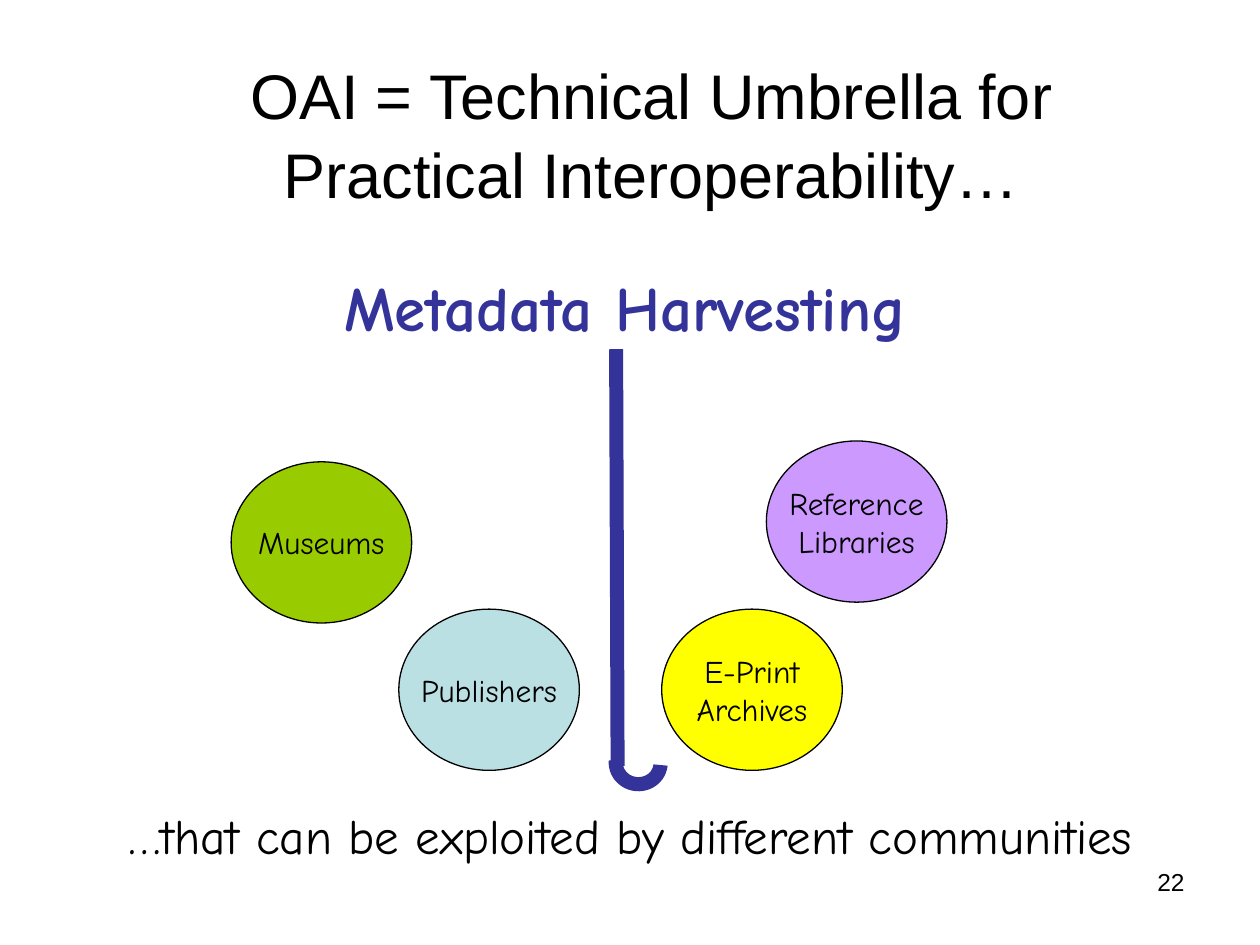
import pptx
import pptx.util
import pptx.dml.color
import pptx.enum.shapes
import pptx.enum.text
import pptx.oxml.ns
import lxml.etree

Cm = pptx.util.Cm
Pt = pptx.util.Pt
SHAPE = pptx.enum.shapes.MSO_SHAPE
ALIGN = pptx.enum.text.PP_ALIGN
ANCHOR = pptx.enum.text.MSO_ANCHOR

COLORS = {
    "text": "000000",
    "umbrella": "333399",
    "museums": "99CC00",
    "publishers": "BBE0E3",
    "eprints": "FFFF00",
    "libraries": "CC99FF",
}


def rgb(name):
    return pptx.dml.color.RGBColor.from_string(COLORS[name])


def write(shape, text, font, size, color="text", bold=False,
          align=ALIGN.CENTER, anchor=ANCHOR.MIDDLE, wrap=True):
    frame = shape.text_frame
    frame.text = text
    frame.word_wrap = wrap
    frame.vertical_anchor = anchor
    for paragraph in frame.paragraphs:
        paragraph.alignment = align
        paragraph.font.name = font
        paragraph.font.size = Pt(size)
        paragraph.font.bold = bold
        paragraph.font.color.rgb = rgb(color)


deck = pptx.Presentation()
deck.slide_width, deck.slide_height = Cm(25.4), Cm(19.05)
slide = deck.slides.add_slide(deck.slide_layouts[5])
shapes = slide.shapes

title = shapes.title
title.left, title.top, title.width, title.height = Cm(1.7), Cm(1.07), Cm(22.86), Cm(3.18)
write(title, "OAI = Technical Umbrella for\vPractical Interoperability…", "Arial", 36)
title.text_frame.paragraphs[0].line_spacing = 1.05

canopy = shapes.add_textbox(Cm(1.27), Cm(5.28), Cm(22.66), Cm(1.7))
write(canopy, "Metadata Harvesting", "Comic Neue", 36, "umbrella", bold=True, anchor=ANCHOR.TOP)

pole = shapes.add_connector(pptx.enum.shapes.MSO_CONNECTOR.STRAIGHT,
                            Cm(12.42), Cm(7.04), Cm(12.45), Cm(15.44))
pole.line.color.rgb = rgb("umbrella")
pole.line.width = Pt(8)
lxml.etree.SubElement(pole._element.spPr, pptx.oxml.ns.qn("a:effectLst"))

handle = shapes.add_shape(SHAPE.BLOCK_ARC, Cm(12.27), Cm(14.81), Cm(1.19), Cm(1.14))
handle.rotation = 185.2
handle.shadow.inherit = False
handle.fill.solid()
handle.fill.fore_color.rgb = rgb("umbrella")
handle.line.fill.background()

communities = [
    ("Reference\nLibraries", "libraries", 15.45, 8.89),
    ("Publishers", "publishers", 8.04, 12.28),
    ("E-Print\vArchives", "eprints", 13.34, 12.28),
    ("Museums", "museums", 4.66, 9.31),
]
for label, color, left, top in communities:
    community = shapes.add_shape(SHAPE.OVAL, Cm(left), Cm(top), Cm(3.64), Cm(3.25))
    community.shadow.inherit = False
    community.fill.solid()
    community.fill.fore_color.rgb = rgb(color)
    community.line.color.rgb = rgb("text")
    community.line.width = Pt(0.75)
    write(community, label, "Comic Neue", 18, wrap=False)

conclusion = shapes.add_textbox(Cm(0.64), Cm(15.24), Cm(24.13), Cm(3.18))
write(conclusion, "…that can be exploited by different communities", "Comic Neue", 28)

page_number = shapes.add_textbox(Cm(18.2), Cm(17.36), Cm(5.93), Cm(1.32))
write(page_number, "22", "Arial", 14, align=ALIGN.RIGHT, anchor=ANCHOR.TOP)

deck.save("out.pptx")
